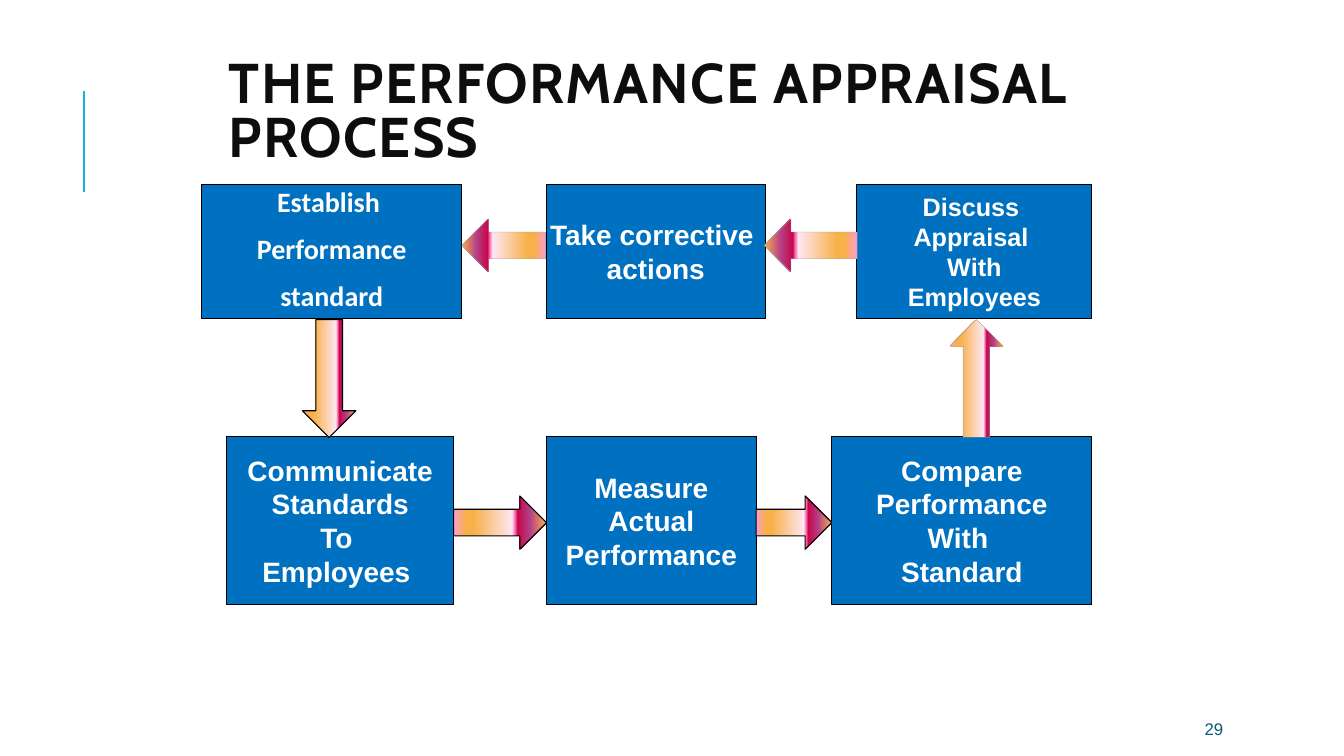
"""Build the performance appraisal process slide."""
from lxml import etree
from pptx import Presentation
from pptx.dml.color import RGBColor
from pptx.enum.shapes import MSO_CONNECTOR, MSO_SHAPE
from pptx.enum.text import MSO_ANCHOR, PP_ALIGN
from pptx.oxml.ns import qn
from pptx.util import Inches, Pt


def color(code):
    return RGBColor.from_string(code)


def write(frame, text, size, face, code, bold=True):
    frame.text = text
    frame.vertical_anchor = MSO_ANCHOR.MIDDLE
    for para in frame.paragraphs:
        for run in para.runs:
            run.font.size = Pt(size)
            run.font.name = face
            run.font.bold = bold
            run.font.color.rgb = color(code)


deck = Presentation()
deck.slide_width, deck.slide_height = Inches(13.33), Inches(7.5)
slide = deck.slides.add_slide(deck.slide_layouts[6])
shapes = slide.shapes

accent = shapes.add_connector(
    MSO_CONNECTOR.STRAIGHT, Inches(0.83), Inches(1.9), Inches(0.83), Inches(0.9))
accent.line.color.rgb = color("1CADE4")
accent.line.width = Pt(1.5)
etree.SubElement(accent._element.spPr, qn("a:effectLst"))

title = shapes.add_textbox(Inches(2.17), Inches(0.77), Inches(9), Inches(0.73)).text_frame
title.word_wrap = True
write(title, "THE PERFORMANCE APPRAISAL PROCESS", 40, "Cabin", "0D0D0D")
title.paragraphs[0].line_spacing = 0.8
title.paragraphs[0].runs[0].font._element.set("spc", "100")

number = shapes.add_textbox(Inches(11.85), Inches(7.08), Inches(1.06), Inches(0.3)).text_frame
write(number, "29", 12, "Arial", "045C75", False)

TOP, LOW = (1.83, 1.33), (4.33, 1.67)
steps = [
    (2, 2.58, TOP, 20, "Calibri", "Establish \nPerformance\nstandard"),
    (2.25, 2.25, LOW, 20, "Arial", "Communicate\nStandards\nTo \nEmployees "),
    (5.42, 2.08, LOW, 20, "Arial", "Measure\nActual\nPerformance"),
    (8.25, 2.58, LOW, 20, "Arial", "Compare\nPerformance\nWith \nStandard"),
    (8.5, 2.33, TOP, 18, "Arial", "Discuss \nAppraisal \nWith\nEmployees"),
    (5.42, 2.17, TOP, 20, "Arial", "Take corrective \nactions"),
]
for left, width, (top, height), size, face, text in steps:
    box = shapes.add_shape(
        MSO_SHAPE.RECTANGLE, Inches(left), Inches(top), Inches(width), Inches(height))
    box.shadow.inherit = False
    box.fill.solid()
    box.fill.fore_color.rgb = color("0070C0")
    box.line.color.rgb = color("000000")
    box.line.width = Pt(0.75)
    frame = box.text_frame
    frame.word_wrap = False
    frame.margin_left = frame.margin_right = Inches(0.2)
    write(frame, text, size, face, "FFFFFF")
    for para in frame.paragraphs:
        para.alignment = PP_ALIGN.CENTER
        if face == "Calibri":
            para.line_spacing = 0.8
            para.space_before, para.space_after = Pt(12), Pt(2)
            props = para._p.get_or_add_pPr()
            props.set("marL", str(Inches(0.1)))
            props.set("indent", str(-Inches(0.1)))

STOPS = [(0, "FC9FCB"), (13, "F8B049"), (21, "F8B049"), (63, "FEE7F2"),
         (67, "F952A0"), (69, "C50849"), (82, "B43E85"), (100, "F8B049")]
MIRROR = [(100 - spot, code) for spot, code in reversed(STOPS)]
THICK = 0.53
BLACK, FAINT = ("000000", 0.75), ("A0A0A0", 0.25)
arrows = [
    (MSO_SHAPE.RIGHT_ARROW, 4.5, 4.92, 0.92, THICK, STOPS, BLACK),
    (MSO_SHAPE.RIGHT_ARROW, 7.5, 4.92, 0.75, THICK, STOPS, BLACK),
    (MSO_SHAPE.DOWN_ARROW, 3, 3.17, THICK, 1.17, STOPS, BLACK),
    (MSO_SHAPE.LEFT_ARROW, 7.58, 2.17, 0.92, THICK, MIRROR, FAINT),
    (MSO_SHAPE.LEFT_ARROW, 4.58, 2.17, 0.83, THICK, MIRROR, FAINT),
    (MSO_SHAPE.UP_ARROW, 9.42, 3.17, THICK, 1.17, STOPS, FAINT),
]
for kind, left, top, width, height, stops, (edge, weight) in arrows:
    arrow = shapes.add_shape(kind, Inches(left), Inches(top), Inches(width), Inches(height))
    arrow.shadow.inherit = False
    arrow.line.color.rgb = color(edge)
    arrow.line.width = Pt(weight)
    arrow.fill.gradient()
    arrow.fill.gradient_angle = 0
    ramp = arrow._element.spPr.find(qn("a:gradFill")).find(qn("a:gsLst"))
    for old in list(ramp):
        ramp.remove(old)
    for spot, code in stops:
        stop = etree.SubElement(ramp, qn("a:gs"), pos=str(spot * 1000))
        etree.SubElement(stop, qn("a:srgbClr"), val=code)

deck.save("out.pptx")
